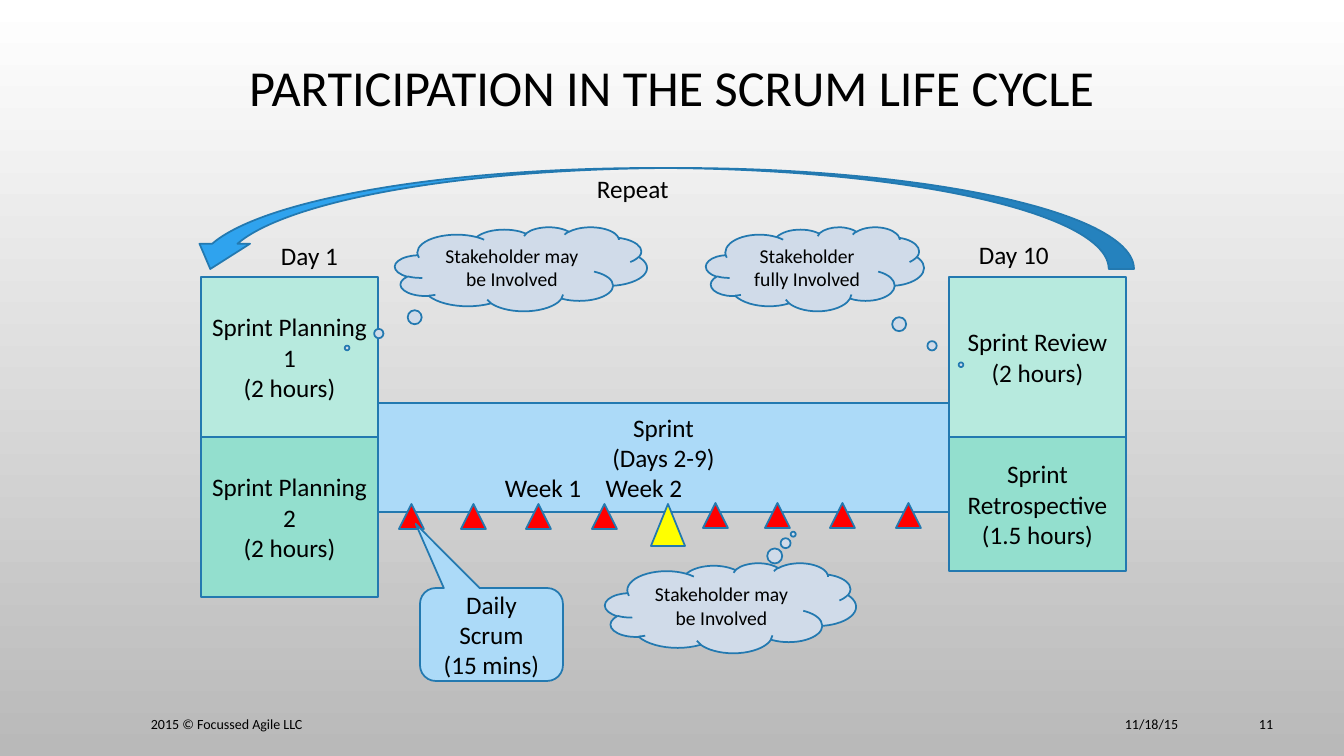
import pptx
import pptx.dml.color
import pptx.enum.shapes
import pptx.enum.text
import pptx.util
from lxml import etree

PX = 914400 / 100.8
SHAPE = pptx.enum.shapes.MSO_SHAPE
ALIGN = pptx.enum.text.PP_ALIGN
ANCHOR = pptx.enum.text.MSO_ANCHOR
COLORS = {
    "text": "000000", "line": "2379B0", "top": "FFFFFF", "bottom": "B9B9B9",
    "mint": "B7EADE", "teal": "93DFCE", "sky": "ACDAF8", "cloud": "D0DBE9",
    "arrow": "2FA3EE", "daily": "FF0000", "midpoint": "FFFF00",
}
COLORS = {name: pptx.dml.color.RGBColor.from_string(c) for name, c in COLORS.items()}


def write(sp, lines, size=18, align=ALIGN.CENTER, anchor=ANCHOR.MIDDLE, wrap=True):
    tf = sp.text_frame
    tf.text = "\n".join(lines)
    tf.word_wrap = wrap
    tf.vertical_anchor = anchor
    font = {"name": "Calibri", "size": pptx.util.Pt(size)}
    for p in tf.paragraphs:
        p.alignment = align
        for r in p.runs:
            for key, value in font.items():
                setattr(r.font, key, value)
            r.font.color.rgb = COLORS["text"]


def add_figure(kind, box, fill, lines=(), size=18, adj=()):
    """Add an outlined preset shape; box is left, top, width, height in px."""
    sp = slide.shapes.add_shape(kind, *[round(v * PX) for v in box])
    sp.shadow.inherit = False
    sp.fill.solid()
    sp.fill.fore_color.rgb = COLORS[fill]
    sp.line.color.rgb = COLORS["line"]
    sp.line.width = pptx.util.Pt(1.25)
    for i, value in enumerate(adj):
        sp.adjustments[i] = value
    if lines:
        write(sp, lines, size)
    return sp


prs = pptx.Presentation()
prs.slide_width, prs.slide_height = round(1344 * PX), round(756 * PX)
slide = prs.slides.add_slide(prs.slide_layouts[5])

bg = slide.background.fill
bg.gradient()
bg.gradient_angle = 270
for stop, position, name in zip(bg.gradient_stops, (0, 1), ("top", "bottom")):
    stop.position = position
    stop.color.rgb = COLORS[name]

title = slide.shapes.title
for key, value in {"left": 101, "top": 2, "width": 1142, "height": 176}.items():
    setattr(title, key, round(value * PX))
write(title, ["PARTICIPATION IN THE SCRUM LIFE CYCLE"], 36)
title.text_frame.paragraphs[0].line_spacing = 0.9

# Meetings on the first and last day
meetings = [
    (201, 277, 160, "mint", ["Sprint Planning 1", "(2 hours)"]),
    (201, 437, 160, "teal", ["Sprint Planning 2", "(2 hours)"]),
    (949, 277, 160, "mint", ["Sprint Review", "(2 hours)"]),
    (949, 437, 134, "teal", ["Sprint Retrospective", "(1.5 hours)"]),
]
for left, top, height, fill, lines in meetings:
    add_figure(SHAPE.RECTANGLE, (left, top, 177, height), fill, lines)

repeat = add_figure(SHAPE.CURVED_UP_ARROW, (185, 168, 949, 101), "arrow")
repeat.rotation = 180

# Sprint bar, with the two weeks set on a tab stop
sprint = add_figure(SHAPE.RECTANGLE, (378, 403, 571, 109), "sky",
                    ["Sprint", "(Days 2-9)", "Week 1\tWeek 2"])
weeks = sprint.text_frame.paragraphs[2]
weeks.alignment = ALIGN.LEFT
pPr = weeks._p.get_or_add_pPr()
pPr.set("marL", str(round(117 * PX)))
pPr.set("indent", "0")
tabs = etree.SubElement(pPr, pptx.oxml.ns.qn("a:tabLst"))
etree.SubElement(tabs, pptx.oxml.ns.qn("a:tab"), pos=str(round(358 * PX)), algn="l")

# Daily scrums of each week and the midpoint
for left, top in ((399, 504), (703, 503)):
    for offset in (0, 62, 127, 193):
        add_figure(SHAPE.ISOSCELES_TRIANGLE, (left + offset, top, 25, 25), "daily")
add_figure(SHAPE.ISOSCELES_TRIANGLE, (651, 504, 34, 42), "midpoint")

add_figure(SHAPE.ROUNDED_RECTANGULAR_CALLOUT, (420, 588, 143, 93), "sky",
           ["Daily", "Scrum", "(15 mins)"], adj=(-0.53, -1.19, 0.17))

clouds = [
    ((395, 227, 252, 84), "Stakeholder may be Involved", (-0.69, 0.94)),
    ((706, 227, 218, 84), "Stakeholder fully Involved", (0.67, 1.14)),
    ((605, 563, 251, 90), "Stakeholder may be Involved", (0.25, -0.82)),
]
for box, words, adj in clouds:
    add_figure(SHAPE.CLOUD_CALLOUT, box, "cloud", [words], 14, adj)

# Free labels and the footer line
label = {"align": ALIGN.LEFT, "anchor": ANCHOR.TOP, "wrap": False}
footer = {"size": 10, "align": ALIGN.RIGHT}
texts = [
    ((587, 168, 92, 40), "Repeat", label),
    ((271, 235, 83, 40), "Day 1", label),
    ((969, 234, 97, 40), "Day 10", label),
    ((886, 704, 302, 40), "11/18/15", footer),
    ((141, 704, 736, 40), "2015 © Focussed Agile LLC", {**footer, "align": ALIGN.LEFT}),
    ((1199, 704, 84, 40), "11", footer),
]
for box, words, style in texts:
    write(slide.shapes.add_textbox(*[round(v * PX) for v in box]), [words], **style)

prs.save("out.pptx")
